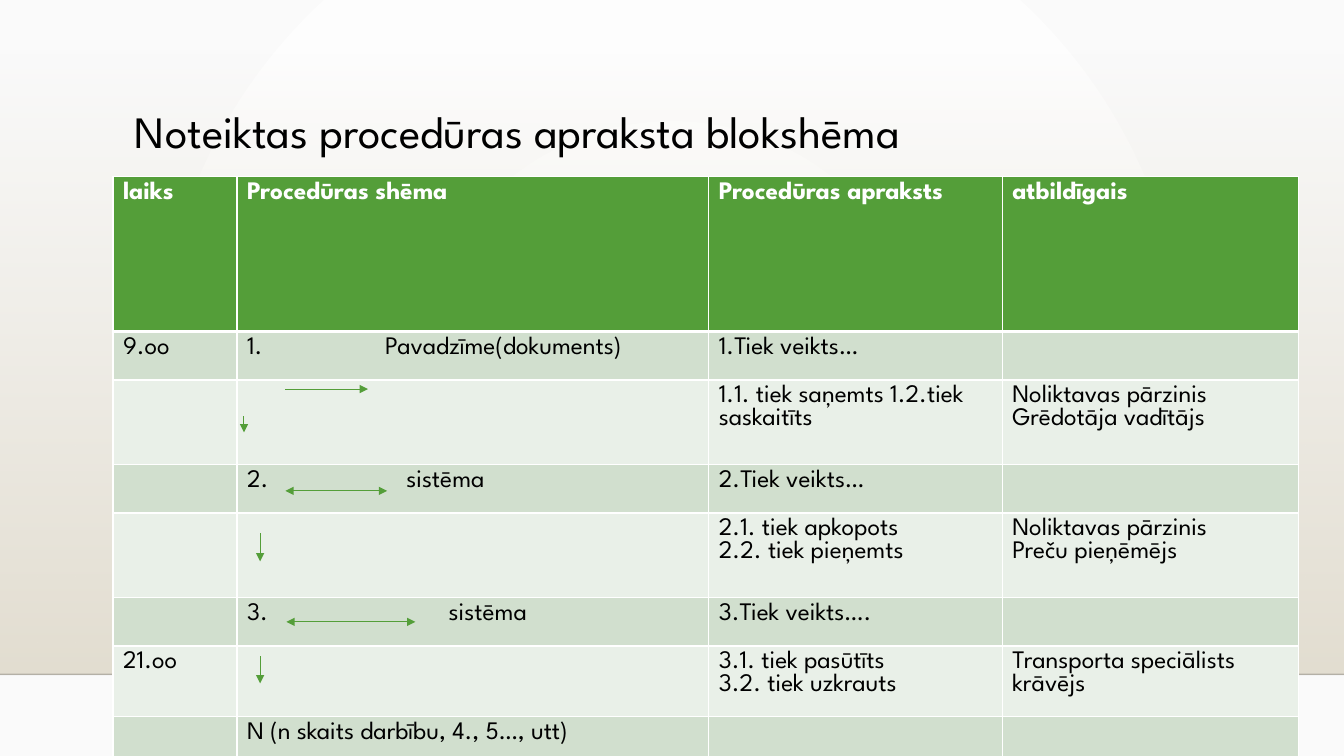
"""Builds a slide with a table that charts the steps of a procedure."""
from lxml import etree
from pptx import Presentation
from pptx.dml.color import RGBColor
from pptx.enum.shapes import MSO_CONNECTOR, MSO_SHAPE
from pptx.enum.text import MSO_ANCHOR
from pptx.oxml.ns import qn
from pptx.util import Inches, Pt

STRAIGHT = MSO_CONNECTOR.STRAIGHT
RECTANGLE = MSO_SHAPE.RECTANGLE
TOP = MSO_ANCHOR.TOP

FONT = "League Spartan"
COLORS = {
    "white": "FFFFFF", "paper": "FAFAFA", "sand": "E3DED1", "sand_end": "E4E0D3",
    "horizon": "000001", "text": "000000", "green": "549E39",
    "band_dark": "D1DFCE", "band_light": "E9F0E8",
}
COLUMN_WIDTHS = [1.23, 4.68, 2.91, 2.94]
ROW_HEIGHTS = [1.54, 0.48, 0.84, 0.48, 0.84, 0.48, 0.48, 0.48]
ROWS = [
    ["laiks", "Procedūras shēma", "Procedūras apraksts", "atbildīgais"],
    ["9.oo", "Pavadzīme(dokuments)", "1.Tiek veikts…", ""],
    ["", "", "1.1. tiek saņemts 1.2.tiek saskaitīts", "Noliktavas pārzinis\nGrēdotāja vadītājs"],
    ["", "2.\tsistēma", "2.Tiek veikts…", ""],
    ["", "", "2.1. tiek apkopots\n2.2. tiek pieņemts", "Noliktavas pārzinis\nPreču pieņēmējs"],
    ["", "3.\tsistēma", "3.Tiek veikts….", ""],
    ["21.oo", "", "3.1. tiek pasūtīts\n3.2. tiek uzkrauts", "Transporta speciālists\nkrāvējs"],
    ["", "N (n skaits darbību, 4., 5…, utt)", "", ""],
]
NUMBERED_CELL = (1, 1)
NUMBER_INDENT = 1.37
TAB_STOPS = {(3, 1): 1.58, (5, 1): 2.0}
ARROWS = [
    (1.71, 2.11, 0.82, 0, False),
    (1.71, 3.12, 1.01, 0, True),
    (1.72, 4.42, 1.28, 0, True),
    (1.3, 2.38, 0, 0.16, False),
    (1.46, 3.54, 0, 0.28, False),
    (1.46, 4.76, 0, 0.27, False),
]


def color(name):
    """Return the named colour."""
    return RGBColor.from_string(COLORS[name])


def add_element(parent, tag, **attributes):
    """Append a DrawingML element with the given attributes."""
    return etree.SubElement(parent, qn(f"a:{tag}"), {key: str(value) for key, value in attributes.items()})


def set_gradient(fill, start, end):
    """Give a fill a gradient between two named colours."""
    fill.gradient()
    for stop, name in zip(fill.gradient_stops, (start, end)):
        stop.color.rgb = color(name)


def format_runs(paragraph, size, color_name, bold=False):
    """Set the font of every run in a paragraph."""
    for run in paragraph.runs:
        run.font.name = FONT
        run.font.size = Pt(size)
        run.font.bold = bold
        run.font.color.rgb = color(color_name)


def add_line(slide, left, top, width, height, color_name, weight):
    """Add a straight line without a shadow."""
    line = slide.shapes.add_connector(
        STRAIGHT, Inches(left), Inches(top), Inches(left + width), Inches(top + height))
    line.line.color.rgb = color(color_name)
    line.line.width = Pt(weight)
    add_element(line._element.spPr, "effectLst")
    return line


def add_backdrop(slide, left, top, width, height):
    """Paint the background, the sand-coloured fade and the horizon."""
    background = slide.background
    set_gradient(background.fill, "white", "paper")
    linear = slide._element.find(".//" + qn("a:lin"))
    gradient = linear.getparent()
    gradient.remove(linear)
    circle = add_element(gradient, "path", path="circle")
    add_element(circle, "fillToRect", l=50000, t=50000, r=50000, b=50000)

    fade = slide.shapes.add_shape(RECTANGLE, Inches(left), Inches(top), Inches(width), Inches(height))
    fade.shadow.inherit = False
    fade.line.fill.background()
    set_gradient(fade.fill, "sand", "sand_end")
    fade.fill.gradient_angle = 270
    add_element(fade._element.spPr.find(".//" + qn("a:srgbClr")), "alpha", val=0)

    horizon = add_line(slide, left, top + height, width, 0, "horizon", 1)
    add_element(horizon._element.spPr.find(".//" + qn("a:srgbClr")), "alpha", val=20000)


def add_title(slide, left, top, width, height):
    """Add the slide title."""
    title = slide.shapes.add_textbox(Inches(left), Inches(top), Inches(width), Inches(height))
    frame = title.text_frame
    frame.word_wrap = True
    frame.vertical_anchor = TOP
    frame.text = "Noteiktas procedūras apraksta blokshēma"
    frame.paragraphs[0].line_spacing = 0.9
    format_runs(frame.paragraphs[0], 32, "text")


def set_borders(cell, bottom_weight):
    """Draw white borders round a cell."""
    properties = cell._tc.get_or_add_tcPr()
    for index, side in enumerate("LRTB"):
        weight = bottom_weight if side == "B" else 1
        border = add_element(properties, f"ln{side}", w=Pt(weight))
        add_element(add_element(border, "solidFill"), "srgbClr", val=COLORS["white"])
        properties.insert(index, border)


def fill_cell(cell, row, column):
    """Write and format one cell of the procedure table."""
    is_header = row == 0
    cell.text_frame.text = ROWS[row][column]
    properties = cell.text_frame.paragraphs[0]._p.get_or_add_pPr()
    if (row, column) == NUMBERED_CELL:
        properties.set("marL", str(Inches(NUMBER_INDENT)))
        properties.set("indent", str(-Inches(NUMBER_INDENT)))
        add_element(properties, "buFont", typeface=FONT)
        add_element(properties, "buAutoNum", type="arabicPeriod")
    if (row, column) in TAB_STOPS:
        stops = add_element(properties, "tabLst")
        add_element(stops, "tab", pos=Inches(TAB_STOPS[row, column]), algn="l")
    for paragraph in cell.text_frame.paragraphs:
        format_runs(paragraph, 18, "white" if is_header else "text", is_header)
    band = "green" if is_header else "band_dark" if row % 2 else "band_light"
    cell.fill.solid()
    cell.fill.fore_color.rgb = color(band)
    set_borders(cell, 3 if is_header else 1)


def add_procedure_table(slide, left, top):
    """Add the table of times, steps, descriptions and people in charge."""
    table = slide.shapes.add_table(
        len(ROWS), len(COLUMN_WIDTHS), Inches(left), Inches(top),
        Inches(sum(COLUMN_WIDTHS)), Inches(sum(ROW_HEIGHTS))).table
    for column, width in zip(table.columns, COLUMN_WIDTHS):
        column.width = Inches(width)
    for row, height in zip(table.rows, ROW_HEIGHTS):
        row.height = Inches(height)
    for row in range(len(ROWS)):
        for column in range(len(COLUMN_WIDTHS)):
            fill_cell(table.cell(row, column), row, column)


def add_flow_arrows(slide, left, top):
    """Add the arrows of the flow, placed from the table's corner."""
    for x, y, width, height, two_headed in ARROWS:
        arrow = add_line(slide, left + x, top + y, width, height, "green", 0.75)
        outline = arrow._element.spPr.find(qn("a:ln"))
        if two_headed:
            add_element(outline, "headEnd", type="triangle")
        add_element(outline, "tailEnd", type="triangle")


def main():
    """Build and save the presentation."""
    presentation = Presentation()
    presentation.slide_width = Inches(13.33)
    presentation.slide_height = Inches(7.5)
    slide = presentation.slides.add_slide(presentation.slide_layouts[6])
    add_backdrop(slide, 0, 0.51, 13.33, 6.18)
    add_title(slide, 1.24, 1.04, 10.5, 1.15)
    add_procedure_table(slide, 1.12, 1.75)
    add_flow_arrows(slide, 1.12, 1.75)
    presentation.save("out.pptx")


if __name__ == "__main__":
    main()
